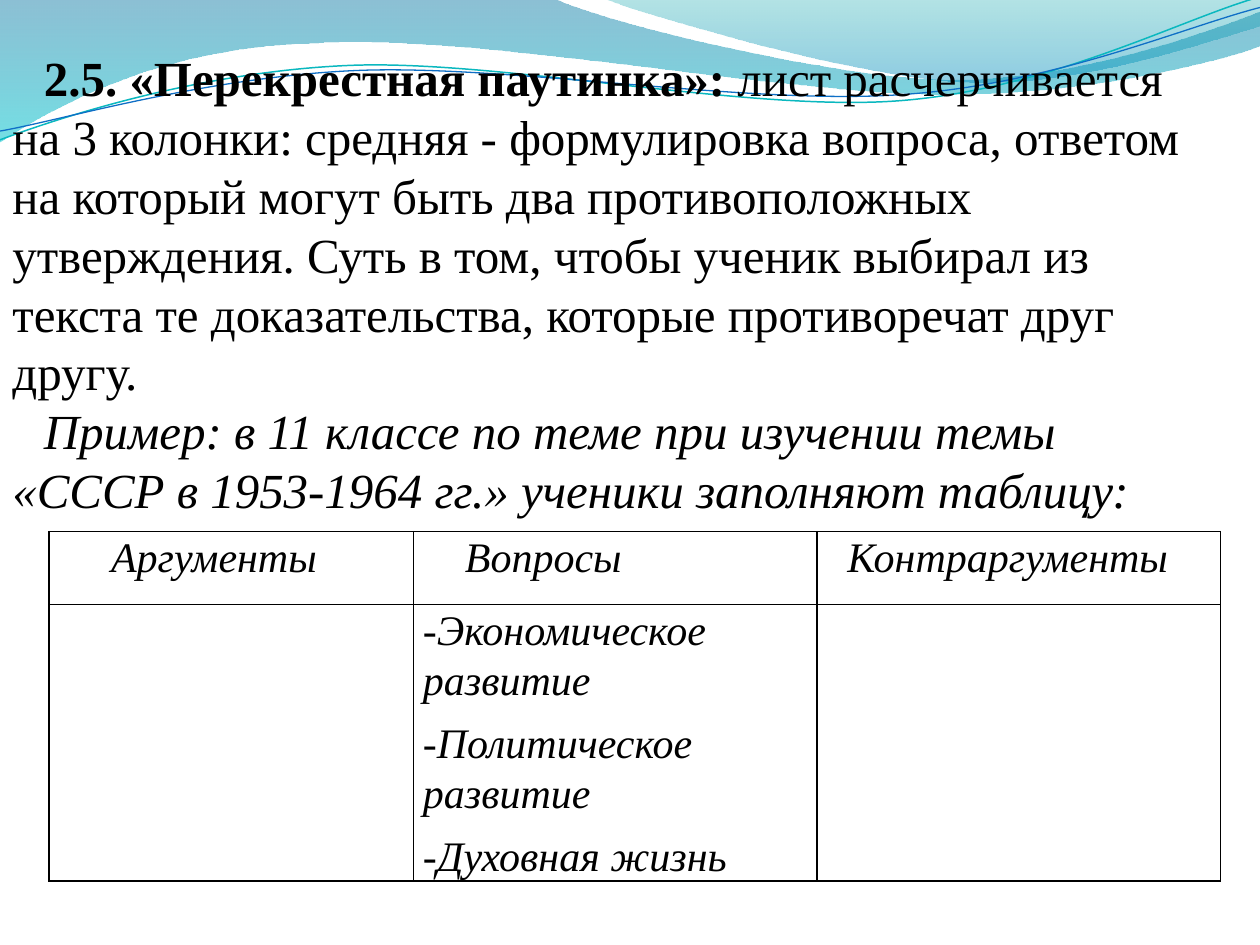
from math import cos, radians, sin

from pptx import Presentation
from pptx.dml.color import RGBColor
from pptx.enum.text import MSO_ANCHOR, MSO_AUTO_SIZE
from pptx.oxml.ns import qn
from pptx.util import Pt
from lxml.etree import SubElement

FONT = "Times New Roman"

# Intro text: paragraphs of (text, bold, italic) runs
INTRO = [
    [("2.5. «Перекрестная паутинка»: ", True, False),
     ("лист расчерчивается на 3 колонки: средняя - формулировка вопроса, ответом "
      "на который могут быть два противоположных утверждения. Суть в том, чтобы "
      "ученик выбирал из текста те доказательства, которые противоречат друг другу.",
      False, False)],
    [("Пример: в 11 классе по теме при изучении темы «СССР в 1953-1964 гг.» "
      "ученики заполняют таблицу:", False, True)],
]

# Table: column (width, header, header indent), then the body cells
COLUMNS = [(208.2, "Аргументы", 30), (230.6, "Вопросы", 24), (230.6, "Контраргументы", 12)]
BODY = [[], ["-Экономическое развитие", "-Политическое развитие", "-Духовная жизнь"], []]
ROW_HEIGHTS = [41.8, 158]

# Outlines in points: one pair is a corner, three pairs are a Bezier curve
# Waves: (outline, gradient stops as (colour, opacity %))
WAVES = [
    ([[(0, 0)], [(316.8, -0.7)],
      [(342.7, 12.2), (478.1, 45.4), (545.8, 45.4)],
      [(614.2, 45.4), (689.8, 18.7), (720, 6.5)],
      [(720.7, 25.9)],
      [(707.8, 31.7), (626.4, 54.7), (537.1, 54)],
      [(447.8, 54), (275, 20.2), (185, 24.5)],
      [(92.9, 25.9), (33.1, 59.8), (-0.7, 81.4)]],
     [("0074A1", 45), ("00C6CF", 55)]),
    ([[(344.9, -0.7)],
      [(366.5, 7.9), (491, 44.6), (553.7, 46.8)],
      [(616.3, 49.7), (691.9, 23), (720, 15.1)],
      [(720, 0)]],
     [("00A1A9", 30), ("008BBF", 45)]),
]
# Threads: (outline as it lies on the slide, centre, colour, width), each tilted
TILT = -2.7
THREADS = [
    ([[(0, 79.9)],
      [(34.6, 67), (113.8, 41), (199.4, 37.4)],
      [(284.4, 33.8), (427, 64.1), (513.4, 57.6)],
      [(599.8, 51.1), (675.4, 10.8), (718.6, -1.4)]], (359.3, 41.4), "0AB8BF", 0.85),
    ([[(0, 74.9)],
      [(33.8, 69.1), (118.1, 43.9), (203.8, 40.3)],
      [(290.2, 36.7), (429.8, 60.5), (516.2, 54)],
      [(601.9, 48.2), (677.5, 15.1), (720, 4.3)]], (359.6, 42.5), "0F6FC6", 0.75),
]


def rgb(value):
    return RGBColor.from_string(value)


def turn(point, centre, degrees):
    a = radians(degrees)
    dx, dy = point[0] - centre[0], point[1] - centre[1]
    return (centre[0] + dx * cos(a) - dy * sin(a),
            centre[1] + dx * sin(a) + dy * cos(a))


def add_outline(slide, outline, close):
    """Build the outline, then join each run of three segments into a curve."""
    points = [(Pt(x), Pt(y)) for part in outline for x, y in part]
    builder = slide.shapes.build_freeform(*points[0])
    builder.add_line_segments(points[1:], close=close)
    s = builder.convert_to_shape()
    s.shadow.inherit = False
    segments = iter(list(s._element.iter(qn("a:lnTo"))))
    for part in outline[1:]:
        group = [next(segments) for _ in part]
        if len(group) == 3:
            group[0].tag = qn("a:cubicBezTo")
            for segment in group[1:]:
                group[0].append(segment[0])
                segment.getparent().remove(segment)
    return s


def add_run(p, text, size, bold=False, italic=False):
    r = p.add_run()
    r.text = text
    r.font.name, r.font.size = FONT, Pt(size)
    r.font.bold, r.font.italic = bold, italic
    r.font.color.rgb = rgb("000000")


def add_borders(cell):
    """Black 1 pt line on all sides; borders come before the fill."""
    tcPr = cell._tc.get_or_add_tcPr()
    for i, side in enumerate(("lnL", "lnR", "lnT", "lnB")):
        ln = SubElement(tcPr, qn(f"a:{side}"), w=str(Pt(1)))
        fill = SubElement(ln, qn("a:solidFill"))
        SubElement(fill, qn("a:srgbClr"), val="000000")
        tcPr.insert(i, ln)


def fill_cell(cell, lines, indent=0):
    cell.margin_left = cell.margin_right = Pt(5.4)
    cell.margin_top = cell.margin_bottom = 0
    cell.fill.background()
    add_borders(cell)
    tf = cell.text_frame
    for i, line in enumerate(lines):
        p = tf.add_paragraph() if i else tf.paragraphs[0]
        p.line_spacing, p.space_after = 1.07, Pt(8)
        if indent:
            p._p.get_or_add_pPr().set("marL", str(Pt(indent)))
        add_run(p, line, 24, italic=True)


prs = Presentation()
prs.slide_width, prs.slide_height = Pt(720), Pt(540)
slide = prs.slides.add_slide(prs.slide_layouts[6])

# Wave decoration
for outline, stops in WAVES:
    s = add_outline(slide, outline, close=True)
    s.line.fill.background()
    s.fill.gradient()
    s.fill.gradient_angle = 270
    for stop, (color, _) in zip(s.fill.gradient_stops, stops):
        stop.color.rgb = rgb(color)
    for clr, (_, opacity) in zip(s._element.spPr.iter(qn("a:srgbClr")), stops):
        SubElement(clr, qn("a:alpha"), val=str(opacity * 1000))
for outline, centre, color, width in THREADS:
    level = [[turn(point, centre, -TILT) for point in part] for part in outline]
    s = add_outline(slide, level, close=False)
    s.rotation = TILT
    s.fill.background()
    s.line.color.rgb = rgb(color)
    s.line.width = Pt(width)

# Table
table = slide.shapes.add_table(2, len(COLUMNS), Pt(28.1), Pt(303.8),
                               Pt(sum(c[0] for c in COLUMNS)), Pt(sum(ROW_HEIGHTS))).table
table.first_row = table.horz_banding = False
for row, height in zip(table.rows, ROW_HEIGHTS):
    row.height = Pt(height)
for i, (width, header, indent) in enumerate(COLUMNS):
    table.columns[i].width = Pt(width)
    fill_cell(table.cell(0, i), [header], indent)
    fill_cell(table.cell(1, i), BODY[i])

# Intro text
tf = slide.shapes.add_textbox(0, Pt(22.5), Pt(697.7), Pt(278.6)).text_frame
tf.word_wrap = True
tf.auto_size = MSO_AUTO_SIZE.SHAPE_TO_FIT_TEXT
tf.vertical_anchor = MSO_ANCHOR.MIDDLE
for i, runs in enumerate(INTRO):
    p = tf.add_paragraph() if i else tf.paragraphs[0]
    p._p.get_or_add_pPr().set("indent", str(Pt(18)))
    for text, bold, italic in runs:
        add_run(p, text, 28, bold, italic)

prs.save("out.pptx")
